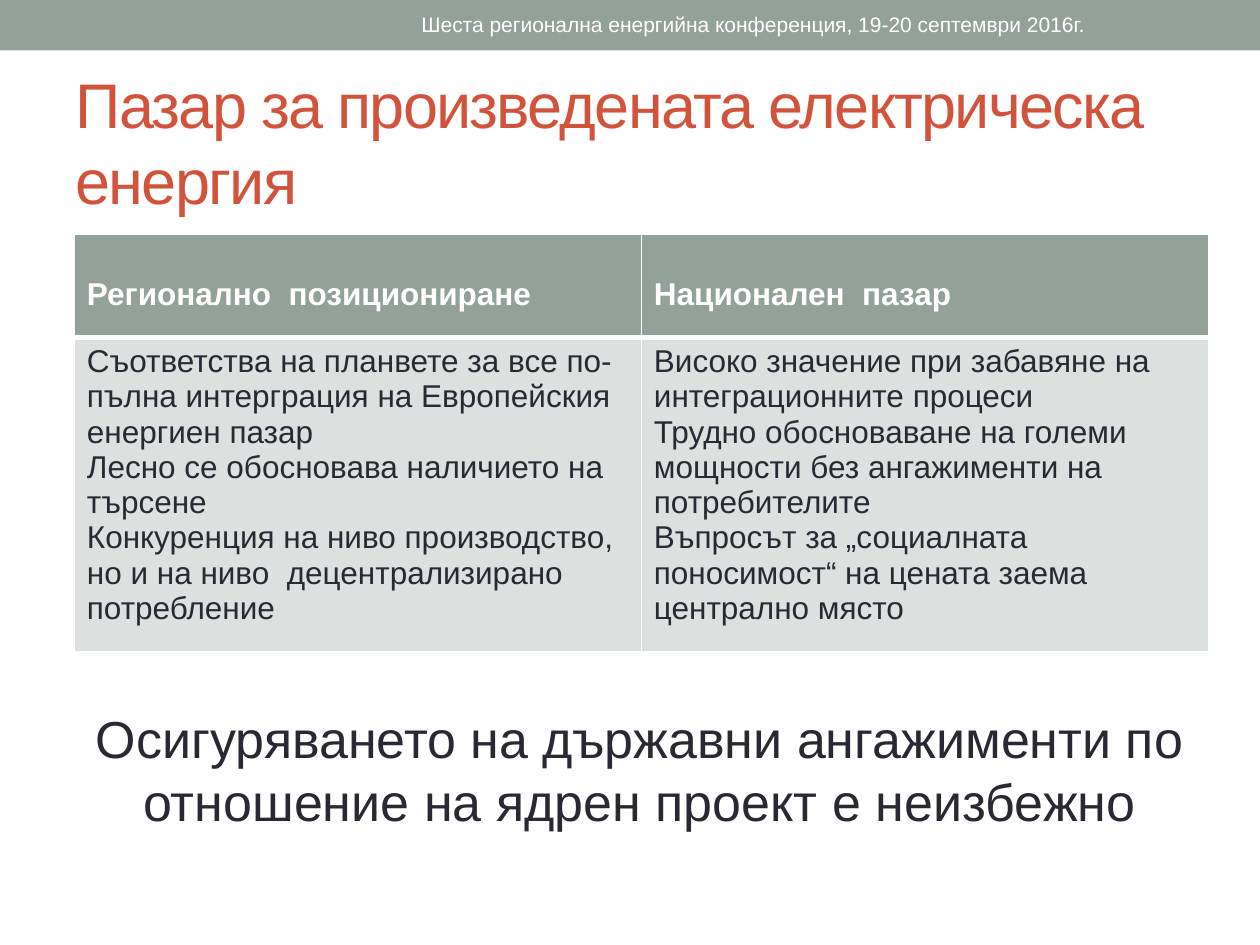
import pptx
import pptx.util
import pptx.dml.color
import pptx.enum.shapes
import pptx.enum.text
import lxml.etree
from pptx.util import Pt

COLORS = {"sage": "93A299", "pale": "DCE0DE", "ink": "292934", "red": "D2533C", "white": "FFFFFF"}
FONT = "Arial"
TITLE = "Пазар за произведената електрическа енергия"
CONFERENCE = "Шеста регионална енергийна конференция, 19-20 септември 2016г."
CONCLUSION = "Осигуряването на държавни ангажименти по отношение на ядрен проект е неизбежно"
COLUMNS = [
    ("Регионално  позициониране", [
        "Съответства на планвете за все по-пълна интерграция на Европейския енергиен пазар",
        "Лесно се обосновава наличието на търсене",
        "Конкуренция на ниво производство, но и на ниво  децентрализирано потребление",
    ]),
    ("Национален  пазар", [
        "Високо значение при забавяне на интеграционните процеси",
        "Трудно обосноваване на големи мощности без ангажименти на потребителите",
        "Въпросът за „социалната поносимост“ на цената заема централно място",
    ]),
]
ROW_HEIGHTS = (59, 179.25)
COLUMN_WIDTH = 324
HEADER_TOP_MARGIN = 24.3


def rgb(name):
    """Return the named colour."""
    return pptx.dml.color.RGBColor.from_string(COLORS[name])


def write(frame, lines, size, color, align=pptx.enum.text.PP_ALIGN.LEFT, bold=False):
    """Fill a text frame with evenly formatted paragraphs."""
    frame.text = "\n".join(lines)
    for para in frame.paragraphs:
        para.alignment = align
        para.space_before = Pt(0)
        para.font.name = FONT
        para.font.size = Pt(size)
        para.font.bold = bold
        para.font.color.rgb = rgb(color)


def place(box, left, top, width, height):
    """Position a text box and centre its text vertically."""
    box.left, box.top, box.width, box.height = map(Pt, (left, top, width, height))
    frame = box.text_frame
    frame.word_wrap = True
    frame.auto_size = pptx.enum.text.MSO_AUTO_SIZE.NONE
    frame.vertical_anchor = pptx.enum.text.MSO_ANCHOR.MIDDLE
    return frame


def add_border(cell, side, width):
    """Draw one white cell border."""
    properties = cell._tc.get_or_add_tcPr()
    line = lxml.etree.Element(pptx.oxml.ns.qn(f"a:ln{side}"), w=str(Pt(width)))
    fill = lxml.etree.SubElement(line, pptx.oxml.ns.qn("a:solidFill"))
    lxml.etree.SubElement(fill, pptx.oxml.ns.qn("a:srgbClr"), val=COLORS["white"])
    properties.insert(len(properties) - 1, line)


def fill_cell(cell, lines, row):
    """Write and colour a header or body cell."""
    header = row == 0
    write(cell.text_frame, lines, 18, "white" if header else "ink", bold=header)
    if header:
        cell.margin_top = Pt(HEADER_TOP_MARGIN)
    cell.fill.solid()
    cell.fill.fore_color.rgb = rgb("sage" if header else "pale")
    widths = {"L": 1, "R": 1, "T": 1 if header else 3, "B": 3 if header else 1}
    for side, width in widths.items():
        add_border(cell, side, width)


def main():
    """Build the slide about the market for generated electricity."""
    deck = pptx.Presentation()
    deck.slide_width, deck.slide_height = Pt(720), Pt(540)
    page = deck.slides.add_slide(deck.slide_layouts[1])
    center = pptx.enum.text.PP_ALIGN.CENTER

    band = page.shapes.add_shape(pptx.enum.shapes.MSO_SHAPE.RECTANGLE, 0, 0, Pt(720), Pt(28.8))
    band.shadow.inherit = False
    band.fill.solid()
    band.fill.fore_color.rgb = rgb("sage")
    band.line.fill.background()

    title = page.shapes.title
    write(place(title, 36, 41.75, 648, 77.75), [TITLE], 36, "red")
    title.text_frame.paragraphs[0].runs[0].font._element.set("spc", "-100")

    table = page.shapes.add_table(2, 2, Pt(42.5), Pt(134), Pt(2 * COLUMN_WIDTH), Pt(sum(ROW_HEIGHTS))).table
    for row, height in enumerate(ROW_HEIGHTS):
        table.rows[row].height = Pt(height)
    for column, (heading, points) in enumerate(COLUMNS):
        table.columns[column].width = Pt(COLUMN_WIDTH)
        for row, lines in enumerate(([heading], points)):
            fill_cell(table.cell(row, column), lines, row)

    conclusion = place(page.placeholders[1], 41.75, 394.5, 648, 90)
    write(conclusion, [CONCLUSION], 29.7, "ink", center)
    properties = conclusion.paragraphs[0]._p.get_or_add_pPr()
    properties.set("marL", "0")
    properties.set("indent", "0")
    lxml.etree.SubElement(properties, pptx.oxml.ns.qn("a:buNone"))
    properties.append(properties.find(pptx.oxml.ns.qn("a:defRPr")))

    conference = page.shapes.add_textbox(0, 0, 0, 0)
    write(place(conference, 212.5, 1.5, 436.25, 24.5), [CONFERENCE], 12, "white", center)

    deck.save("out.pptx")


if __name__ == "__main__":
    main()
